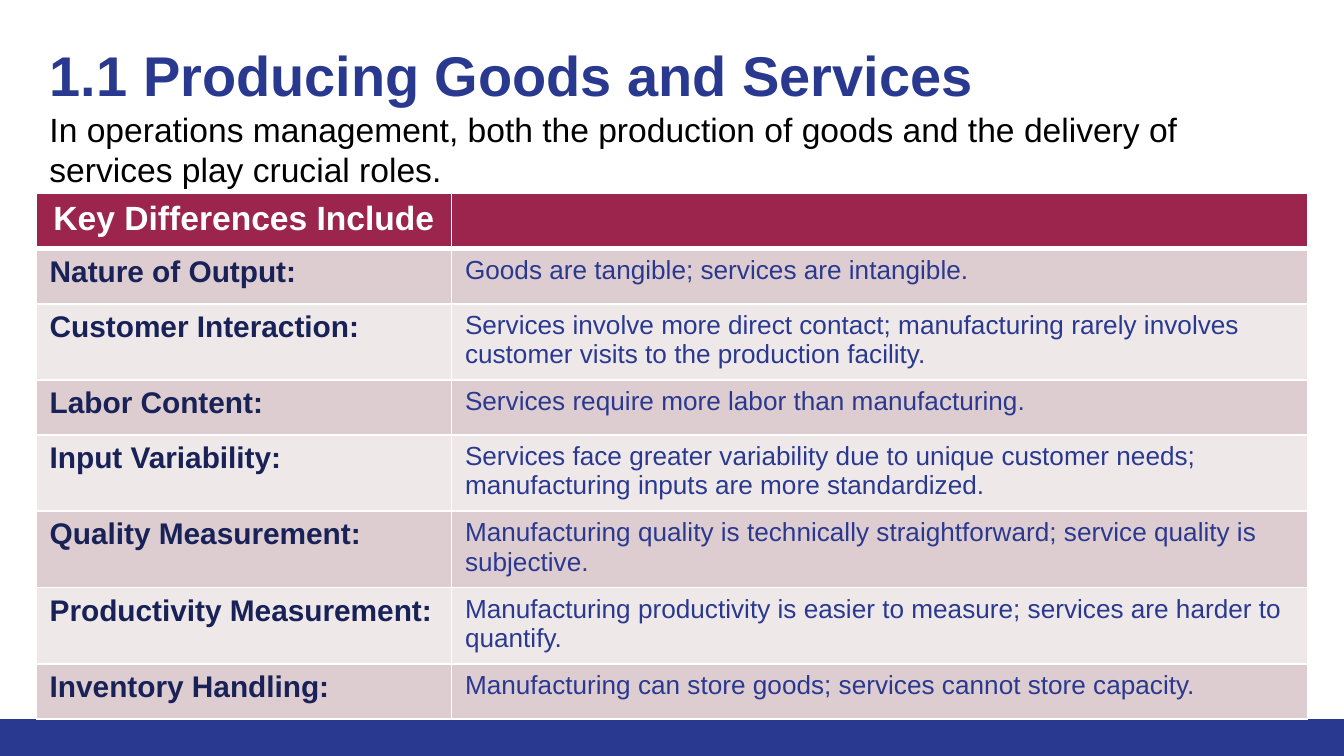
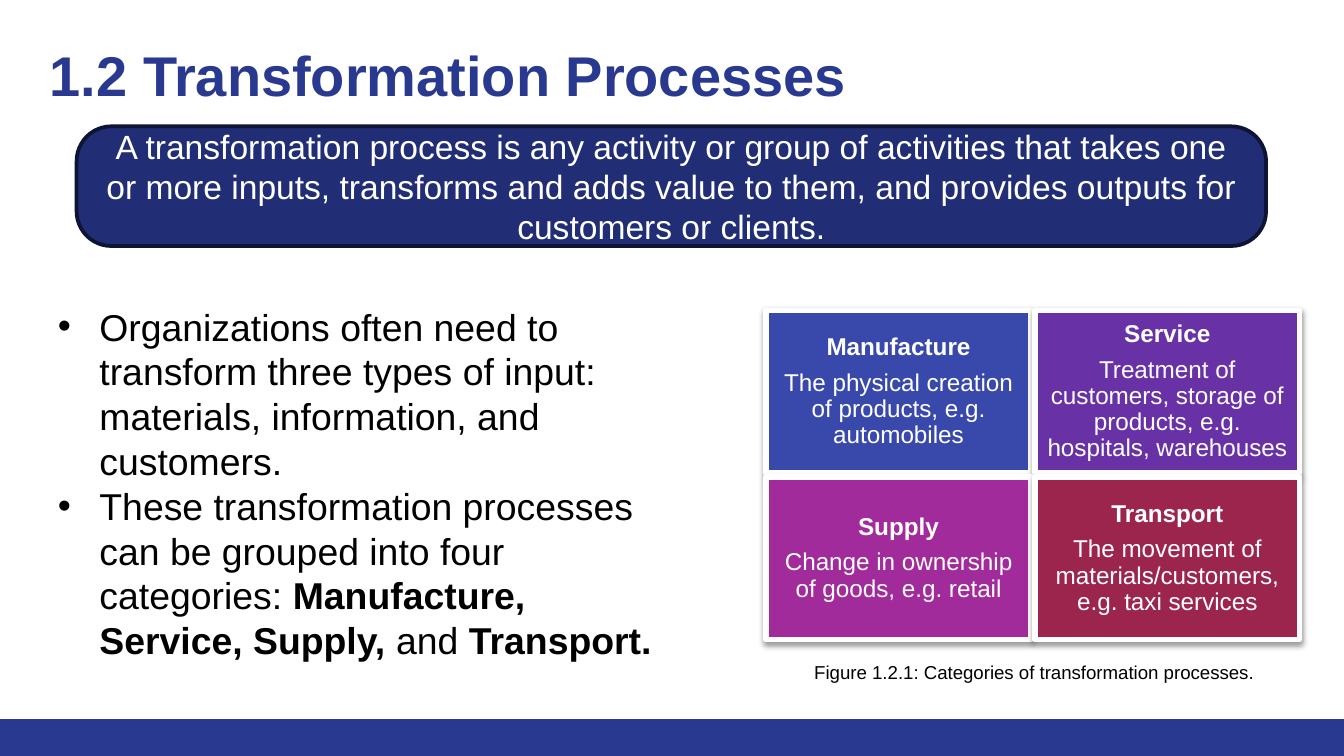
"""Build two slides on producing goods and services and on transformation processes."""
from dataclasses import dataclass
from typing import NamedTuple

from lxml.etree import SubElement
from pptx import Presentation
from pptx.dml.color import RGBColor
from pptx.enum.shapes import MSO_SHAPE
from pptx.enum.text import MSO_ANCHOR, MSO_AUTO_SIZE, PP_ALIGN
from pptx.oxml.ns import qn
from pptx.util import Emu, Pt

FONT = "Arial"
WHITE, BLACK = "FFFFFF", "000000"
BLUE, NAVY, CRIMSON = "2A3990", "192257", "9C254D"
ROW_FILLS = ("DECDD0", "EFE8E9")
PAGE_WIDTH, PAGE_HEIGHT = 2000, 1125
BAND_TOP = 1070
TABLE_LEFT, TABLE_TOP, ROW_HEIGHT = 54, 288, 82
COLUMN_WIDTHS = (618, 1274)
TILE_LEFT, TILE_TOP, TILE_WIDTH, TILE_HEIGHT = 1140, 462, 394, 242
TILE_STEP_X, TILE_STEP_Y = 400, 248
BULLET_INDENT = 62


class Box(NamedTuple):
    """A place on the page, in px."""
    left: int
    top: int
    width: int
    height: int


class Span(NamedTuple):
    """A stretch of text in one style."""
    text: str
    size: int
    color: str = BLACK
    bold: bool = False


@dataclass(frozen=True)
class Difference:
    """A table row that sets goods against services."""
    aspect: str
    detail: str


@dataclass(frozen=True)
class Category:
    """A tile naming one kind of transformation process."""
    name: str
    detail: str
    fill: str


DIFFERENCES = (
    Difference("Nature of Output:", "Goods are tangible; services are intangible."),
    Difference("Customer Interaction:", "Services involve more direct contact; manufacturing rarely "
               "involves customer visits to the production facility."),
    Difference("Labor Content:", "Services require more labor than manufacturing."),
    Difference("Input Variability:", "Services face greater variability due to unique customer needs; "
               "manufacturing inputs are more standardized."),
    Difference("Quality Measurement:", "Manufacturing quality is technically straightforward; "
               "service quality is subjective."),
    Difference("Productivity Measurement:", "Manufacturing productivity is easier to measure; "
               "services are harder to quantify."),
    Difference("Inventory Handling:", "Manufacturing can store goods; services cannot store capacity."),
)
CATEGORIES = (
    Category("Manufacture", "The physical creation of products, e.g. automobiles", "3949AB"),
    Category("Service", "Treatment of customers, storage of products, e.g. hospitals, warehouses", "6832A6"),
    Category("Supply", "Change in ownership of goods, e.g. retail", "A12B9A"),
    Category("Transport", "The movement of materials/customers, e.g. taxi services", CRIMSON),
)
BULLETS = (
    (Span("Organizations often need to transform three types of input: materials, information, "
          "and customers.", 20),),
    (Span("These transformation processes can be grouped into four categories: ", 20),
     Span("Manufacture, Service, Supply, ", 20, bold=True),
     Span("and", 20),
     Span(" Transport.", 20, bold=True)),
)


def px(length: int) -> Emu:
    """Turn px into EMU at 200 px to the inch."""
    return Emu(length * 4572)


def rgb(color: str) -> RGBColor:
    """Turn a hex string into a colour."""
    return RGBColor.from_string(color)


def place(shape, box: Box) -> None:
    """Move a shape to a box."""
    shape.left, shape.top, shape.width, shape.height = map(px, box)


def write(frame, paragraphs, align=PP_ALIGN.LEFT) -> None:
    """Fill a text frame with paragraphs of spans."""
    frame.word_wrap = True
    for index, spans in enumerate(paragraphs):
        para = frame.add_paragraph() if index else frame.paragraphs[0]
        para.alignment = align
        for span in spans:
            run = para.add_run()
            run.text = span.text
            run.font.name = FONT
            run.font.size = Pt(span.size)
            run.font.bold = span.bold
            run.font.color.rgb = rgb(span.color)


def add_block(shapes, kind: MSO_SHAPE, box: Box, fill: str, line: str = "", weight: int = 0):
    """Add a filled preset shape, outlined if a line colour is given."""
    block = shapes.add_shape(kind, *map(px, box))
    block.shadow.inherit = False
    block.fill.solid()
    block.fill.fore_color.rgb = rgb(fill)
    if line:
        block.line.color.rgb = rgb(line)
        block.line.width = Pt(weight)
    else:
        block.line.fill.background()
    block.text_frame.vertical_anchor = MSO_ANCHOR.MIDDLE
    return block


def add_text(page, box: Box, span: Span) -> None:
    """Add a text box holding one span."""
    write(page.shapes.add_textbox(*map(px, box)).text_frame, [[span]])


def add_page(deck, layout: int, title: str):
    """Add a page with its title and footer band."""
    page = deck.slides.add_slide(deck.slide_layouts[layout])
    add_block(page.shapes, MSO_SHAPE.RECTANGLE,
              Box(0, BAND_TOP, PAGE_WIDTH, PAGE_HEIGHT - BAND_TOP), BLUE)
    place(page.shapes.title, Box(54, 40, 1840, 178))
    frame = page.shapes.title.text_frame
    frame.auto_size = MSO_AUTO_SIZE.NONE
    frame.vertical_anchor = MSO_ANCHOR.TOP
    frame.margin_left = frame.margin_right = frame.margin_top = frame.margin_bottom = px(20)
    write(frame, [[Span(title, 30, BLUE, True)]])
    return page


def set_borders(cell, bottom: int) -> None:
    """Give a cell white borders, with its own weight at the bottom."""
    properties = cell._tc.get_or_add_tcPr()
    for index, (side, weight) in enumerate((("L", 1), ("R", 1), ("T", 1), ("B", bottom))):
        line = properties.makeelement(qn(f"a:ln{side}"), {"w": str(Pt(weight))})
        SubElement(SubElement(line, qn("a:solidFill")), qn("a:srgbClr"), val=WHITE)
        properties.insert(index, line)


def fill_cell(cell, fill: str, spans, align=PP_ALIGN.LEFT, bottom: int = 1) -> None:
    """Colour a cell, border it and write its text."""
    cell.fill.solid()
    cell.fill.fore_color.rgb = rgb(fill)
    set_borders(cell, bottom)
    write(cell.text_frame, [spans], align)


def add_differences(page) -> None:
    """Add the table of differences between goods and services."""
    count = len(DIFFERENCES) + 1
    table = page.shapes.add_table(
        count, len(COLUMN_WIDTHS), px(TABLE_LEFT), px(TABLE_TOP),
        px(sum(COLUMN_WIDTHS)), px(count * ROW_HEIGHT)).table
    for column, width in zip(table.columns, COLUMN_WIDTHS):
        column.width = px(width)
    header = [Span("Key Differences Include", 18, WHITE, True)]
    fill_cell(table.cell(0, 0), CRIMSON, header, PP_ALIGN.CENTER, 3)
    fill_cell(table.cell(0, 1), CRIMSON, [], bottom=3)
    for index, difference in enumerate(DIFFERENCES):
        fill = ROW_FILLS[index % 2]
        fill_cell(table.cell(index + 1, 0), fill, [Span(difference.aspect, 16, NAVY, True)])
        fill_cell(table.cell(index + 1, 1), fill, [Span(difference.detail, 14, BLUE)])


def add_shadow(shape) -> None:
    """Cast a soft shadow below a shape."""
    effects = shape._element.spPr.find(qn("a:effectLst"))
    shadow = SubElement(effects, qn("a:outerShdw"), blurRad=str(Pt(3.1)), dist=str(Pt(1.6)),
                        dir="5400000", rotWithShape="0")
    color = SubElement(shadow, qn("a:srgbClr"), val=BLACK)
    SubElement(color, qn("a:alpha"), val="38000")


def add_categories(page) -> None:
    """Add the two by two grid of category tiles."""
    group = page.shapes.add_group_shape()
    for index, category in enumerate(CATEGORIES):
        row, column = divmod(index, 2)
        box = Box(TILE_LEFT + column * TILE_STEP_X, TILE_TOP + row * TILE_STEP_Y,
                  TILE_WIDTH, TILE_HEIGHT)
        tile = add_block(group.shapes, MSO_SHAPE.RECTANGLE, box, category.fill, WHITE, 3)
        add_shadow(tile)
        frame = tile.text_frame
        frame.margin_left = frame.margin_right = frame.margin_top = frame.margin_bottom = px(10)
        write(frame, [[Span(category.name, 13, WHITE, True)],
                      [Span(category.detail, 13, WHITE)]], PP_ALIGN.CENTER)
        for para in frame.paragraphs:
            para.line_spacing = 0.9
            para.space_after = Pt(5)


def add_bullets(page) -> None:
    """Fill the body placeholder with the bullet list."""
    body = page.placeholders[1]
    place(body, Box(66, 442, 964, 558))
    body.text_frame.auto_size = MSO_AUTO_SIZE.NONE
    write(body.text_frame, BULLETS)
    for para in body.text_frame.paragraphs:
        para.space_before = Pt(0)
        properties = para._p.get_or_add_pPr()
        properties.set("marL", str(px(BULLET_INDENT)))
        properties.set("indent", str(px(-BULLET_INDENT)))
        SubElement(properties, qn("a:buChar"), char="•")


def build_goods_and_services(deck) -> None:
    """Build the page that compares goods and services."""
    page = add_page(deck, 5, "1.1 Producing Goods and Services")
    add_text(page, Box(54, 152, 1892, 142), Span(
        "In operations management, both the production of goods and the delivery of services "
        "play crucial roles.", 18))
    add_differences(page)


def build_transformation(deck) -> None:
    """Build the page on transformation processes."""
    page = add_page(deck, 1, "1.2 Transformation Processes")
    definition = add_block(page.shapes, MSO_SHAPE.ROUNDED_RECTANGLE, Box(114, 188, 1770, 178),
                           "212D74", "0E1433", 2)
    definition.adjustments[0] = 0.29
    write(definition.text_frame, [[Span(
        "A transformation process is any activity or group of activities that takes one or more "
        "inputs, transforms and adds value to them, and provides outputs for customers or clients.",
        18, WHITE)]], PP_ALIGN.CENTER)
    add_bullets(page)
    add_categories(page)
    add_text(page, Box(1192, 974, 742, 54),
             Span("Figure 1.2.1: Categories of transformation processes.", 10))


def main() -> None:
    """Build and save the deck."""
    deck = Presentation()
    deck.slide_width, deck.slide_height = px(PAGE_WIDTH), px(PAGE_HEIGHT)
    build_goods_and_services(deck)
    build_transformation(deck)
    deck.save("out.pptx")


if __name__ == "__main__":
    main()
